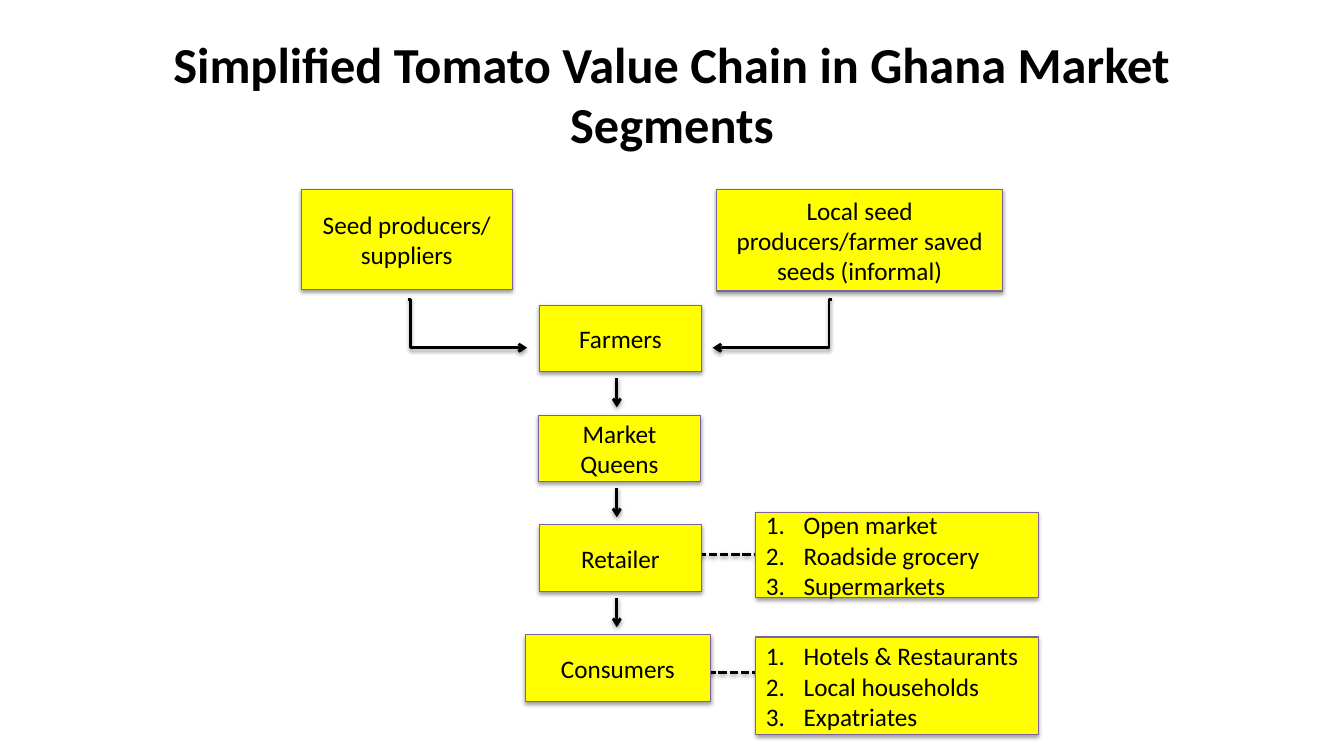
from dataclasses import dataclass

from lxml.etree import SubElement
from pptx import Presentation
from pptx.dml.color import RGBColor
from pptx.enum.dml import MSO_LINE
from pptx.enum.shapes import MSO_CONNECTOR, MSO_SHAPE
from pptx.enum.text import MSO_ANCHOR, PP_ALIGN
from pptx.oxml.ns import qn
from pptx.slide import Slide
from pptx.util import Pt


@dataclass(frozen=True)
class Theme:
    font: str = "Calibri"
    title_size: float = 36
    body_size: float = 18
    ink: RGBColor = RGBColor(0, 0, 0)
    box_fill: RGBColor = RGBColor(0xFF, 0xFF, 0x00)
    box_line: RGBColor = RGBColor(0x7D, 0x60, 0xA0)
    box_line_width: float = 0.75
    link_width: float = 2


@dataclass(frozen=True)
class Box:
    lines: tuple[str, ...]
    left: float
    top: float
    width: float
    height: float
    numbered: bool = False


@dataclass(frozen=True)
class Link:
    start: tuple[float, float]
    end: tuple[float, float]
    dashed: bool = False
    bend: float | None = None  # share of the width at which an elbow turns


THEME = Theme()
TITLE = "Simplified Tomato Value Chain in Ghana Market Segments"

# Chain of stages, evenly spaced from top to bottom
STAGE_TOP, STAGE_PITCH, STAGE_HEIGHT = 218, 78.5, 47.5
ARROW_X, ARROW_GAP, ARROW_LENGTH = 440.6, 4.5, 21
STAGES = [
    ("Farmers", 385.2, 116),
    ("Market Queens", 384.5, 116),
    ("Retailer", 385.2, 116),
    ("Consumers", 375.1, 132.5),
]
STAGE_BOXES = [
    Box((name,), left, STAGE_TOP + index * STAGE_PITCH, width, STAGE_HEIGHT)
    for index, (name, left, width) in enumerate(STAGES)
]

# Seed sources above the chain, market segments beside it
SOURCE_BOXES = [
    Box(("Seed producers/", "suppliers"), 215.3, 135.4, 150.5, 71.5),
    Box(("Local seed producers/farmer saved seeds (informal)",), 512, 135.4, 204, 72.5),
]
SEGMENT_BOXES = [
    Box(("Open market", "Roadside grocery", "Supermarkets"), 540, 365.8, 201.6, 61.2, True),
    Box(("Hotels & Restaurants", "Local households", "Expatriates"), 540, 455, 201.6, 70, True),
]

# Dashed links run behind the boxes, arrows in front
SEGMENT_LINKS = [
    Link((474, 396), (561, 396), dashed=True),
    Link((489, 480.2), (575.3, 480.2), dashed=True),
]
SOURCE_ARROWS = [
    Link((291.6, 213.8), (376.6, 248.4), bend=0.022),
    Link((594, 213.8), (509, 248.4), bend=0.022),
]
STAGE_ARROWS = [
    Link(
        (ARROW_X, box.top + box.height + ARROW_GAP),
        (ARROW_X, box.top + box.height + ARROW_GAP + ARROW_LENGTH),
    )
    for box in STAGE_BOXES[:-1]
]


def add_soft_shadow(properties) -> None:
    """Append a soft downward shadow to the properties of a shape or connector."""
    effects = SubElement(properties, qn("a:effectLst"))
    shadow = SubElement(
        effects, qn("a:outerShdw"), blurRad=str(Pt(3.1)), dist=str(Pt(1.6)),
        dir="5400000", rotWithShape="0",
    )
    color = SubElement(shadow, qn("a:srgbClr"), val=str(THEME.ink))
    SubElement(color, qn("a:alpha"), val="38000")


def style_paragraph(paragraph, size: float, alignment: PP_ALIGN, bold: bool = False) -> None:
    paragraph.alignment = alignment
    paragraph.font.name = THEME.font
    paragraph.font.size = Pt(size)
    paragraph.font.bold = bold
    paragraph.font.color.rgb = THEME.ink


def number_paragraph(paragraph) -> None:
    properties = paragraph._p.get_or_add_pPr()
    properties.set("marL", str(Pt(27)))
    properties.set("indent", str(Pt(-27)))
    numbering = properties.makeelement(qn("a:buAutoNum"), {"type": "arabicPeriod"})
    properties.insert(0, numbering)


def add_title(slide: Slide) -> None:
    title = slide.shapes.add_textbox(Pt(48), Pt(21.6), Pt(864), Pt(90))
    frame = title.text_frame
    frame.word_wrap = True
    frame.vertical_anchor = MSO_ANCHOR.MIDDLE
    frame.text = TITLE
    style_paragraph(frame.paragraphs[0], THEME.title_size, PP_ALIGN.CENTER, bold=True)


def add_box(slide: Slide, box: Box) -> None:
    shape = slide.shapes.add_shape(
        MSO_SHAPE.RECTANGLE, Pt(box.left), Pt(box.top), Pt(box.width), Pt(box.height)
    )
    shape.fill.solid()
    shape.fill.fore_color.rgb = THEME.box_fill
    shape.line.color.rgb = THEME.box_line
    shape.line.width = Pt(THEME.box_line_width)
    add_soft_shadow(shape._element.spPr)
    frame = shape.text_frame
    frame.word_wrap = True
    frame.vertical_anchor = MSO_ANCHOR.MIDDLE
    frame.text = "\n".join(box.lines)
    for paragraph in frame.paragraphs:
        alignment = PP_ALIGN.LEFT if box.numbered else PP_ALIGN.CENTER
        style_paragraph(paragraph, THEME.body_size, alignment)
        if box.numbered:
            number_paragraph(paragraph)


def add_link(slide: Slide, link: Link) -> None:
    kind = MSO_CONNECTOR.STRAIGHT if link.bend is None else MSO_CONNECTOR.ELBOW
    connector = slide.shapes.add_connector(
        kind, *(Pt(length) for length in (*link.start, *link.end))
    )
    connector.line.color.rgb = THEME.ink
    connector.line.width = Pt(THEME.link_width)
    properties = connector._element.spPr
    if link.dashed:
        connector.line.dash_style = MSO_LINE.SQUARE_DOT
    else:
        SubElement(properties.find(qn("a:ln")), qn("a:tailEnd"), type="arrow")
    if link.bend is not None:
        guides = properties.find(qn("a:prstGeom")).find(qn("a:avLst"))
        SubElement(guides, qn("a:gd"), name="adj1", fmla=f"val {round(link.bend * 100000)}")
    add_soft_shadow(properties)


def main() -> None:
    presentation = Presentation()
    presentation.slide_width, presentation.slide_height = Pt(960), Pt(540)
    slide = presentation.slides.add_slide(presentation.slide_layouts[6])

    add_title(slide)
    for link in SEGMENT_LINKS:
        add_link(slide, link)
    for box in SOURCE_BOXES + STAGE_BOXES + SEGMENT_BOXES:
        add_box(slide, box)
    for link in SOURCE_ARROWS + STAGE_ARROWS:
        add_link(slide, link)

    presentation.save("out.pptx")


if __name__ == "__main__":
    main()
